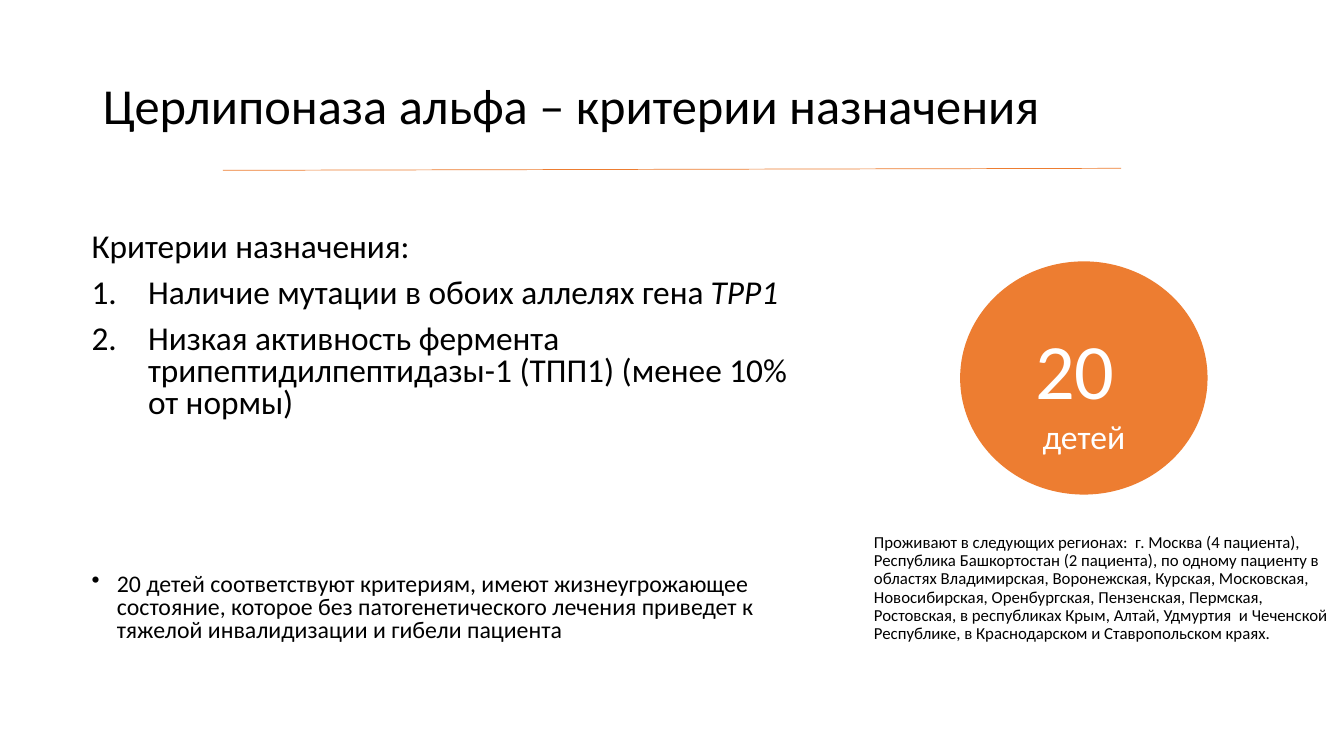
"""Build the slide with the prescription criteria for cerliponase alfa."""
from dataclasses import dataclass

from lxml.etree import SubElement
from pptx import Presentation
from pptx.dml.color import RGBColor
from pptx.enum.shapes import MSO_CONNECTOR as Connector, MSO_SHAPE as Shape
from pptx.enum.text import MSO_ANCHOR as Anchor, PP_ALIGN as Align
from pptx.oxml.ns import qn
from pptx.util import Inches, Pt

FONT = "Calibri"
BLACK, WHITE, ORANGE = "000000", "FFFFFF", "ED7D31"


@dataclass(frozen=True)
class Span:
    text: str
    size: float = 23.8
    italic: bool = False


@dataclass(frozen=True)
class Para:
    spans: tuple[Span, ...]
    line_spacing: float = 0.8
    before: float = 10
    indent: float = 0
    bullet: tuple[str, str, str] | None = None
    align: Align = Align.LEFT


@dataclass(frozen=True)
class TextBlock:
    left: float
    top: float
    width: float
    height: float
    paras: tuple[Para, ...]
    color: str = BLACK


NUMBER = ("a:buAutoNum", "type", "arabicPeriod")
DOT = ("a:buChar", "char", "•")

TITLE = Para((Span("Церлипоназа альфа – критерии назначения", 36),), 0.9, 0)

CRITERIA = TextBlock(0.81, 2.26, 7.09, 4.54, (
    Para((Span("Критерии назначения:"),)),
    Para((Span("Наличие мутации в обоих аллелях гена "),
          Span("TPP1", italic=True)), indent=0.56, bullet=NUMBER),
    Para((Span("Низкая активность фермента трипептидилпептидазы-1 (ТПП1) "
               "(менее 10% от нормы)"),), indent=0.56, bullet=NUMBER),
    Para((Span("20 детей соответствуют критериям, имеют жизнеугрожающее "
               "состояние, которое без патогенетического лечения приведет к "
               "тяжелой инвалидизации и гибели пациента", 17),),
         before=110, indent=0.25, bullet=DOT),
))

CHILDREN = TextBlock(9.96, 3.14, 1.58, 1.45, (
    Para((Span("20  ", 56), Span("детей", 24)), 1, 0, align=Align.CENTER),
), WHITE)

REGIONS = TextBlock(8.57, 5.25, 4.76, 1.5, (
    Para((Span("Проживают в следующих регионах:  г. Москва (4 пациента), "
               "Республика Башкортостан (2 пациента), по одному пациенту в "
               "областях Владимирская, Воронежская, Курская, Московская, "
               "Новосибирская, Оренбургская, Пензенская, Пермская, "
               "Ростовская, в республиках Крым, Алтай, Удмуртия  и Чеченской "
               "Республике, в Краснодарском и Ставропольском краях.", 12),),
         0.9),
))


def rgb(color: str) -> RGBColor:
    """Turn a hex string into a colour."""
    return RGBColor.from_string(color)


def write_para(paragraph, para: Para, color: str) -> None:
    """Fill and format one paragraph."""
    paragraph.alignment = para.align
    paragraph.line_spacing = para.line_spacing
    paragraph.space_before = Pt(para.before)
    for span in para.spans:
        run = paragraph.add_run()
        run.text = span.text
        run.font.name = FONT
        run.font.size = Pt(span.size)
        run.font.italic = span.italic
        run.font.color.rgb = rgb(color)
    if para.bullet:
        tag, key, value = para.bullet
        properties = paragraph._p.get_or_add_pPr()
        properties.set("marL", str(Inches(para.indent)))
        properties.set("indent", str(-Inches(para.indent)))
        SubElement(properties, qn(tag)).set(key, value)


def add_text(page, block: TextBlock) -> None:
    """Add a wrapped text box with its paragraphs."""
    box = page.shapes.add_textbox(Inches(block.left), Inches(block.top),
                                  Inches(block.width), Inches(block.height))
    frame = box.text_frame
    frame.word_wrap = True
    for index, para in enumerate(block.paras):
        paragraph = frame.add_paragraph() if index else frame.paragraphs[0]
        write_para(paragraph, para, block.color)


def add_title(page) -> None:
    """Place and format the title placeholder."""
    title = page.shapes.title
    title.left, title.top = Inches(0.92), Inches(0.35)
    title.width, title.height = Inches(11.5), Inches(1.45)
    title.text_frame.vertical_anchor = Anchor.MIDDLE
    title.text_frame.word_wrap = True
    write_para(title.text_frame.paragraphs[0], TITLE, BLACK)


def add_rule(page) -> None:
    """Draw the thin line under the title."""
    rule = page.shapes.add_connector(Connector.STRAIGHT, Inches(11.12),
                                     Inches(1.67), Inches(2.21), Inches(1.69))
    rule.line.color.rgb = rgb(ORANGE)
    rule.line.width = Pt(0.5)
    SubElement(rule._element.spPr, qn("a:effectLst"))


def add_disc(page) -> None:
    """Draw the disc behind the number of children."""
    disc = page.shapes.add_shape(Shape.OVAL, Inches(9.53), Inches(2.6),
                                 Inches(2.44), Inches(2.3))
    disc.shadow.inherit = False
    disc.fill.solid()
    disc.fill.fore_color.rgb = rgb(ORANGE)
    disc.line.color.rgb = rgb(ORANGE)
    disc.line.width = Pt(1)


def main() -> None:
    """Build and save the deck."""
    deck = Presentation()
    deck.slide_width, deck.slide_height = Inches(13.33), Inches(7.5)
    page = deck.slides.add_slide(deck.slide_layouts.get_by_name("Title Only"))
    add_title(page)
    add_rule(page)
    add_disc(page)
    for block in (CRITERIA, CHILDREN, REGIONS):
        add_text(page, block)
    deck.save("out.pptx")


if __name__ == "__main__":
    main()
